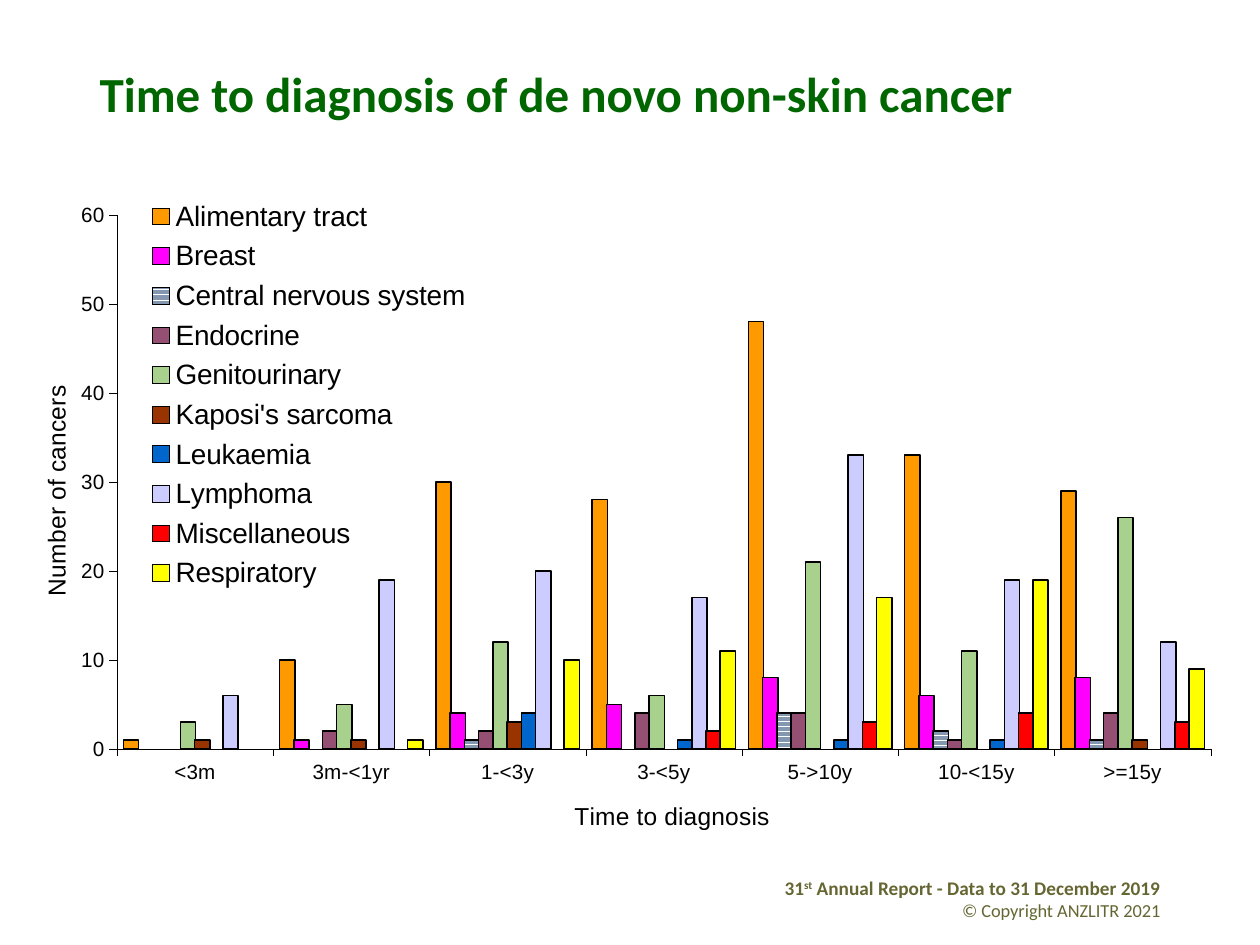
from pptx import Presentation
from pptx.chart.data import CategoryChartData as Data
from pptx.dml.color import RGBColor
from pptx.enum.chart import XL_CHART_TYPE as Kind, XL_LEGEND_POSITION as Pos
from pptx.enum.chart import XL_TICK_MARK as Tick
from pptx.enum.dml import MSO_PATTERN as Pattern
from pptx.enum.text import MSO_ANCHOR as Anchor, PP_ALIGN as Align
from pptx.oxml import parse_xml
from pptx.oxml.ns import nsdecls, qn
from pptx.util import Pt

PX = 914400 / 126
GREEN = RGBColor(0x00, 0x66, 0x00)
OLIVE = RGBColor(0x66, 0x66, 0x33)
BLACK = RGBColor(0x00, 0x00, 0x00)
WHITE = RGBColor(0xFF, 0xFF, 0xFF)
ORANGE = RGBColor(0xFF, 0x99, 0x00)
PINK = RGBColor(0xFF, 0x00, 0xFF)
SLATE = RGBColor(0x84, 0x97, 0xB0)
PLUM = RGBColor(0x95, 0x4F, 0x72)
SAGE = RGBColor(0xA9, 0xD1, 0x8E)
BROWN = RGBColor(0x99, 0x33, 0x00)
BLUE = RGBColor(0x00, 0x66, 0xCC)
LILAC = RGBColor(0xCC, 0xCC, 0xFF)
RED = RGBColor(0xFF, 0x00, 0x00)
YELLOW = RGBColor(0xFF, 0xFF, 0x00)

# Content
TITLE = "Time to diagnosis of de novo non-skin cancer"
REPORT = ["31", "st", " Annual Report - Data to 31 December 2019"]
RIGHTS = "© Copyright ANZLITR 2021"
TIMES = ["<3m", "3m-<1yr", "1-<3y", "3-<5y", "5->10y", "10-<15y", ">=15y"]
CANCERS = [
    ("Alimentary tract", ORANGE, [1, 10, 30, 28, 48, 33, 29]),
    ("Breast", PINK, [None, 1, 4, 5, 8, 6, 8]),
    ("Central nervous system", SLATE, [None, None, 1, None, 4, 2, 1]),
    ("Endocrine", PLUM, [None, 2, 2, 4, 4, 1, 4]),
    ("Genitourinary", SAGE, [3, 5, 12, 6, 21, 11, 26]),
    ("Kaposi's sarcoma", BROWN, [1, 1, 3, None, None, None, 1]),
    ("Leukaemia", BLUE, [None, None, 4, 1, 1, 1, None]),
    ("Lymphoma", LILAC, [6, 19, 20, 17, 33, 19, 12]),
    ("Miscellaneous", RED, [None, None, None, 2, 3, 4, 3]),
    ("Respiratory", YELLOW, [None, 1, 10, 11, 17, 19, 9]),
]
STRIPED = "Central nervous system"

# Places in px: left, top, width, height
HEAD = (87, 50, 1086, 93)
FOOT = (742, 870, 431, 50)
CHART = (18, 192, 1198, 658)
PLOT = (117, 215, 1094, 534)
LEGEND = (144, 192, 330, 406)
TIME_AT = (570, 796)
COUNT_AT = (36, 381)


def emu(box):
    return [round(n * PX) for n in box]


def style(font, size, color=BLACK, name="Arial", bold=False):
    font.size, font.name, font.bold = Pt(size), name, bold
    font.color.rgb = color


def write(para, text, align=Align.LEFT, raised=False, **look):
    para.alignment = align
    run = para.add_run()
    run.text = text
    style(run.font, **look)
    if raised:
        run.font._element.set("baseline", "30000")


def place(part, box, after=None, inner=False):
    """Give a chart part a manual layout from slide px."""
    for old in part.findall(qn("c:layout")):
        part.remove(old)
    left, top, wide, high = CHART
    vals = [(box[0] - left) / wide, (box[1] - top) / high]
    vals += [n / whole for n, whole in zip(box[2:], (wide, high))]
    rows = '<c:layoutTarget val="inner"/>' if inner else ""
    rows += '<c:xMode val="edge"/><c:yMode val="edge"/>'
    rows += "".join(f'<c:{k} val="{v:.4f}"/>' for k, v in zip("xywh", vals))
    layout = parse_xml(f'<c:layout {nsdecls("c")}><c:manualLayout>{rows}'
                       "</c:manualLayout></c:layout>")
    if after:
        part.find(qn(after)).addnext(layout)
    else:
        part.insert(0, layout)


def set_axis(axis, text, spot):
    axis.has_major_gridlines = False
    axis.major_tick_mark, axis.minor_tick_mark = Tick.OUTSIDE, Tick.NONE
    style(axis.tick_labels.font, 11.8)
    axis.format.line.color.rgb = BLACK
    axis.format.line.width = Pt(0.22)
    title = axis.axis_title
    write(title.text_frame.paragraphs[0], text, align=Align.CENTER, size=14)
    place(title._element, spot, after="c:tx")


deck = Presentation()
deck.slide_width, deck.slide_height = emu((1260, 945))
slide = deck.slides.add_slide(deck.slide_layouts[5])

# Title
head = slide.shapes.title
head.left, head.top, head.width, head.height = emu(HEAD)
head.text_frame.vertical_anchor = Anchor.MIDDLE
para = head.text_frame.paragraphs[0]
para.line_spacing = 0.9
write(para, TITLE, size=28, color=GREEN, name="Calibri", bold=True)

# Report line and copyright
foot = slide.shapes.add_textbox(*emu(FOOT)).text_frame
foot.word_wrap = True
look = dict(align=Align.RIGHT, color=OLIVE, name="Calibri")
for part in REPORT:
    write(foot.paragraphs[0], part, size=11, bold=True,
          raised=part == "st", **look)
write(foot.add_paragraph(), RIGHTS, size=10.5, **look)

# Chart
data = Data(number_format="0")
data.categories = TIMES
for name, color, vals in CANCERS:
    data.add_series(name, vals)
chart = slide.shapes.add_chart(
    Kind.COLUMN_CLUSTERED, *emu(CHART), data).chart
style(chart.font, 20.1, name="Montserrat", bold=True)
chart.has_title = False
place(chart._chartSpace.chart.plotArea, PLOT, inner=True)

# Columns
plot = chart.plots[0]
plot.vary_by_categories = False
plot.gap_width, plot.overlap = 84, 7
for bar, (name, color, vals) in zip(plot.series, CANCERS):
    bar.invert_if_negative = False
    fill = bar.format.fill
    if name == STRIPED:
        fill.patterned()
        fill.pattern = Pattern.DARK_HORIZONTAL
        fill.fore_color.rgb, fill.back_color.rgb = color, WHITE
    else:
        fill.solid()
        fill.fore_color.rgb = color
    bar.format.line.color.rgb = BLACK
    bar.format.line.width = Pt(0.87)

# Axes
set_axis(chart.category_axis, "Time to diagnosis", TIME_AT)
count = chart.value_axis
set_axis(count, "Number of cancers", COUNT_AT)
count.minimum_scale, count.maximum_scale, count.major_unit = 0, 60, 10
count.tick_labels.number_format = "0"
count.tick_labels.number_format_is_linked = False

# Legend over the plot
chart.has_legend = True
legend = chart.legend
legend.position = Pos.LEFT
legend.include_in_layout = False
style(legend.font, 16)
place(legend._element, LEGEND, after="c:legendPos")

deck.save("out.pptx")
